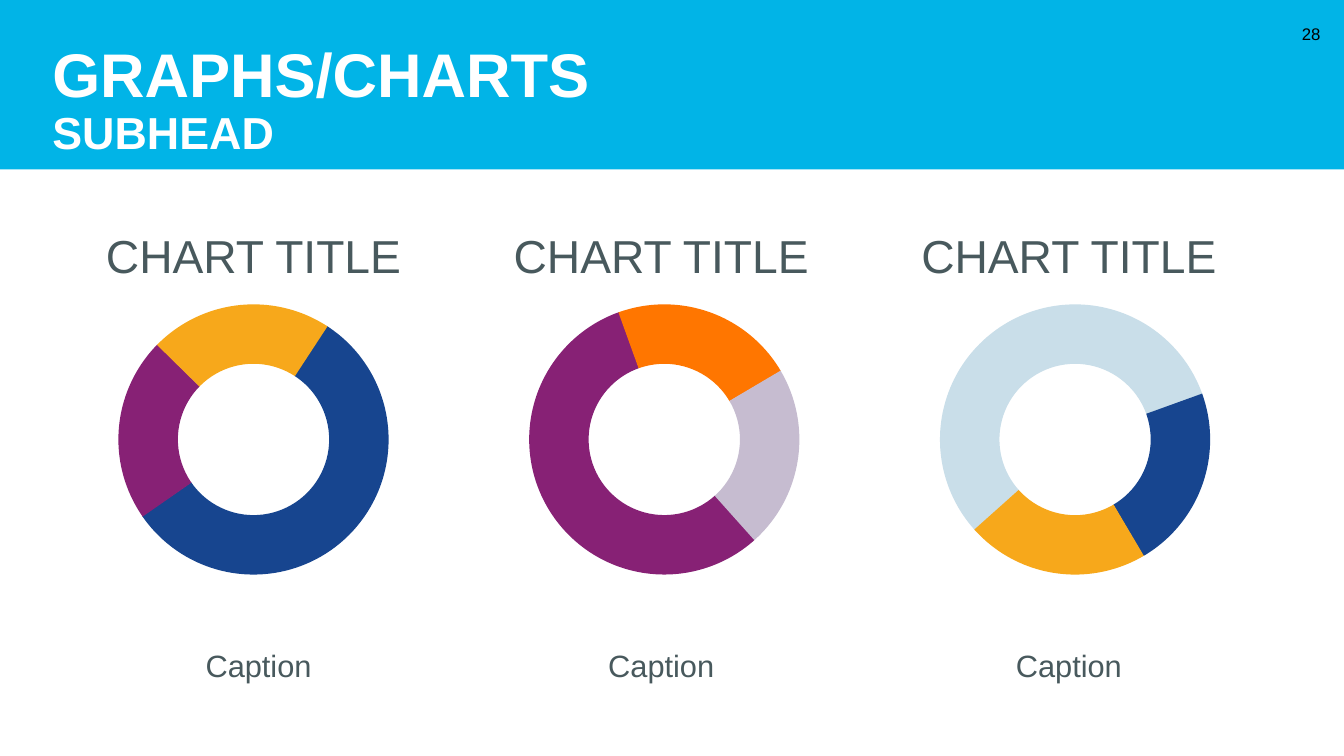
from pptx import Presentation
from pptx.dml.color import RGBColor as Rgb
from pptx.enum.shapes import MSO_SHAPE as Kind
from pptx.enum.text import MSO_ANCHOR as Anchor, MSO_AUTO_SIZE as Fit, PP_ALIGN as Align
from pptx.util import Pt

HEX = {
    "sky": "01B4E7", "white": "FFFFFF", "black": "000000", "slate": "48595D",
    "navy": "17458F", "plum": "872175", "gold": "F7A81B",
    "orange": "FF7600", "lilac": "C6BCD0", "ice": "C9DEE9",
}
WIDE, HIGH, BAND = 960, 540, 121
LEFT, STEP, COL = 48.24, 291.2, 265.7
RING = 193

# Start angle, end angle and ring thickness of each slice
ARCS = [
    (181.69, 87.26, 0.22),
    (87.09, 134.74, 0.22),
    (134.64, 181.91, 0.22),
]

# Turn, slice colours, ring shift and caption shift of each column
COLS = [
    (0, ("navy", "plum", "gold"), 0, 3.6),
    (105, ("plum", "orange", "lilac"), 2.2, 0),
    (195, ("ice", "navy", "gold"), 4.4, 0),
]


def set_font(run, size, hue, bold=False):
    for name, val in {"name": "Arial", "size": Pt(size), "bold": bold}.items():
        setattr(run.font, name, val)
    run.font.color.rgb = Rgb.from_string(HEX[hue])


def set_frame(frame, **form):
    form = {"word_wrap": True, "auto_size": Fit.NONE, **form}
    for name, val in form.items():
        setattr(frame, name, val)


def put_shape(slide, kind, box, hue):
    shape = slide.shapes.add_shape(kind, *map(Pt, box))
    shape.shadow.inherit = False
    shape.fill.solid()
    shape.fill.fore_color.rgb = Rgb.from_string(HEX[hue])
    shape.line.fill.background()
    return shape


def put_text(slide, box, text, size, hue, align=Align.CENTER, anchor=Anchor.MIDDLE):
    frame = slide.shapes.add_textbox(*map(Pt, box)).text_frame
    set_frame(frame, vertical_anchor=anchor)
    para = frame.paragraphs[0]
    para.alignment = align
    run = para.add_run()
    run.text = text
    set_font(run, size, hue)


def put_head(slide, x, y, w, h):
    # Band behind the title
    band = put_shape(slide, Kind.RECTANGLE, (x, y, w, h), "sky")
    title = slide.shapes.title
    title.element.addprevious(band.element)

    # Title and subhead
    place = {"left": x + 30.2, "top": y, "width": w - 54, "height": h}
    for name, val in place.items():
        setattr(title, name, Pt(val))
    set_frame(title.text_frame, vertical_anchor=Anchor.BOTTOM,
              margin_left=Pt(7.2), margin_right=Pt(7.2),
              margin_top=0, margin_bottom=Pt(7.2))
    para = title.text_frame.paragraphs[0]
    para.alignment, para.line_spacing = Align.LEFT, 0.9
    head = para.add_run()
    head.text = "GRAPHS/CHARTS"
    set_font(head, 44, "white", True)
    para.add_line_break()
    sub = para.add_run()
    sub.text = "SUBHEAD"
    set_font(sub, 32, "white", True)

    # Page number
    put_text(slide, (x + w - 42.7, y + 9.4, 33.1, 28.8), "28", 12, "black", Align.RIGHT)


def put_ring(slide, x, y, size, turn, hues):
    for arc, hue in zip(ARCS, hues):
        slice_ = put_shape(slide, Kind.BLOCK_ARC, (x, y, size, size), hue)
        slice_.rotation = turn
        for i, val in enumerate(arc):
            slice_.adjustments[i] = val


def put_col(slide, x, y, w, turn, hues, shift, nudge):
    put_text(slide, (x, y, w, 47.5), "CHART TITLE", 33, "slate", anchor=Anchor.TOP)
    put_text(slide, (x + nudge, y + 251.3, w, 129.6), "Caption", 22, "slate")
    put_ring(slide, x + (w - RING) / 2 + shift, y + 58.3, RING, turn, hues)


def main():
    deck = Presentation()
    deck.slide_width, deck.slide_height = Pt(WIDE), Pt(HIGH)
    slide = deck.slides.add_slide(deck.slide_layouts[5])
    put_head(slide, 0, 0, WIDE, BAND)
    for i, col in enumerate(COLS):
        put_col(slide, LEFT + i * STEP, 159.1, COL, *col)
    deck.save("out.pptx")


if __name__ == "__main__":
    main()
